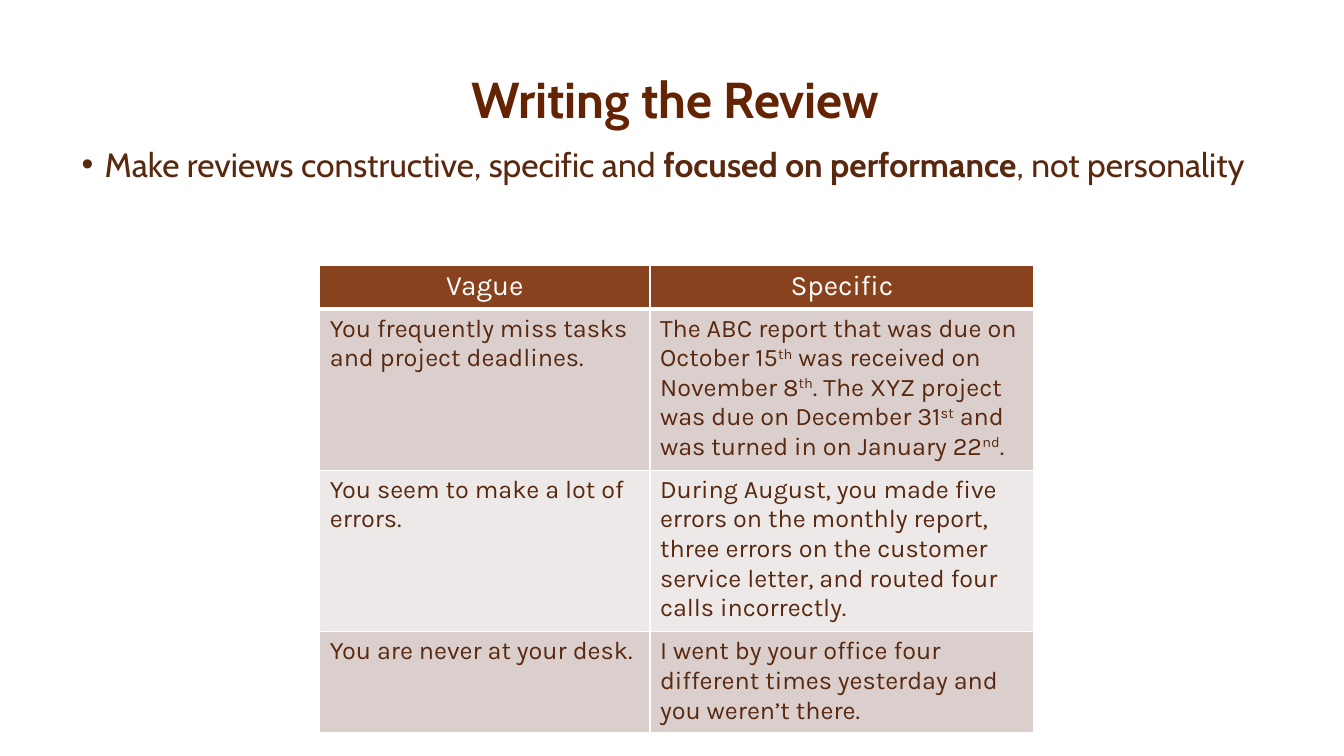
from lxml import etree
from pptx import Presentation
from pptx.dml.color import RGBColor
from pptx.enum.text import MSO_ANCHOR, PP_ALIGN
from pptx.oxml.ns import qn
from pptx.util import Cm, Pt

CENTER, LEFT = PP_ALIGN.CENTER, PP_ALIGN.LEFT
TOP, BOTTOM = MSO_ANCHOR.TOP, MSO_ANCHOR.BOTTOM
TITLE_BROWN = RGBColor(0x64, 0x24, 0x04)
TEXT_BROWN = RGBColor(0x59, 0x28, 0x0F)
HEADER_BROWN = RGBColor(0x88, 0x43, 0x1E)
BAND_DARK = RGBColor(0xDA, 0xCF, 0xCD)
BAND_LIGHT = RGBColor(0xED, 0xE9, 0xE8)
WHITE = RGBColor(0xFF, 0xFF, 0xFF)

TITLE_FONT = dict(name="Cabin", size=Pt(36), bold=True, color=TITLE_BROWN)
BODY_FONT = dict(name="Cabin", size=Pt(24), bold=False, color=TEXT_BROWN)
HEADER_FONT = dict(name="Karla", size=Pt(20), bold=False, color=WHITE)
CELL_FONT = dict(name="Karla", size=Pt(18), bold=False, color=TEXT_BROWN)

# Each text is a list of pieces; a (text, kind) pair is a bold or raised piece
BULLET = ["Make reviews constructive, specific and ",
          ("focused on performance", "bold"), ", not personality"]
COLUMN_WIDTHS = [Cm(8.32), Cm(9.68)]
ROW_HEIGHTS = [Cm(1.07), Cm(4.04), Cm(4.07), Cm(2.54)]
ROWS = [
    (["Vague"], ["Specific"]),
    (["You frequently miss tasks and project deadlines."],
     ["The ABC report that was due on October 15", ("th", "raised"),
      " was received on November 8", ("th", "raised"),
      ". The XYZ project was due on December 31", ("st", "raised"),
      " and was turned in on January 22", ("nd", "raised"), "."]),
    (["You seem to make a lot of errors."],
     ["During August, you made five errors on the monthly report, three errors "
      "on the customer service letter, and routed four calls incorrectly."]),
    (["You are never at your desk."],
     ["I went by your office four different times yesterday "
      "and you weren’t there."]),
]


def format_font(font, values):
    for key, value in values.items():
        if key == "color":
            font.color.rgb = value
        else:
            setattr(font, key, value)


def write(p, pieces, font, align):
    p.alignment = align
    for piece in pieces:
        text, kind = (piece, None) if isinstance(piece, str) else piece
        r = p.add_run()
        r.text = text
        format_font(r.font, font)
        if kind == "bold":
            r.font.bold = True
        elif kind == "raised":
            r._r.get_or_add_rPr().set("baseline", "30000")


def set_frame(tf, anchor):
    tf.word_wrap = True
    tf.vertical_anchor = anchor
    for side in ("left", "top", "right", "bottom"):
        setattr(tf, f"margin_{side}", 0)


def place(sp, left, top, width, height):
    sp.left, sp.top, sp.width, sp.height = left, top, width, height


def add_title(s, text):
    sp = s.shapes.title
    place(sp, Cm(9.35), Cm(2.03), Cm(15.34), Cm(1.24))
    set_frame(sp.text_frame, BOTTOM)
    p = sp.text_frame.paragraphs[0]
    p.line_spacing = 0.9
    write(p, [text], TITLE_FONT, CENTER)


def add_bullet(s, pieces):
    sp = s.shapes.add_textbox(Cm(1.8), Cm(3.63), Cm(29.92), Cm(2.44))
    set_frame(sp.text_frame, TOP)
    p = sp.text_frame.paragraphs[0]
    pPr = p._p.get_or_add_pPr()
    pPr.set("marL", str(Cm(0.84)))
    pPr.set("indent", str(Cm(-0.58)))
    etree.SubElement(pPr, qn("a:buFont"), typeface="Arial")
    etree.SubElement(pPr, qn("a:buChar"), char="•")
    write(p, pieces, BODY_FONT, LEFT)


def set_borders(cell, bottom_width):
    tcPr = cell._tc.get_or_add_tcPr()
    for side in "LRTB":
        width = bottom_width if side == "B" else Pt(1)
        ln = etree.SubElement(tcPr, qn(f"a:ln{side}"), w=str(width))
        fill = etree.SubElement(ln, qn("a:solidFill"))
        etree.SubElement(fill, qn("a:srgbClr"), val=str(WHITE))


def fill_cell(cell, pieces, row):
    header = row == 0
    set_borders(cell, Pt(3) if header else Pt(1))
    cell.fill.solid()
    band = BAND_DARK if row % 2 else BAND_LIGHT
    cell.fill.fore_color.rgb = HEADER_BROWN if header else band
    write(cell.text_frame.paragraphs[0], pieces,
          HEADER_FONT if header else CELL_FONT, CENTER if header else LEFT)


def add_review_table(s):
    frame = s.shapes.add_table(len(ROWS), len(COLUMN_WIDTHS), Cm(8.06), Cm(6.68),
                               sum(COLUMN_WIDTHS), sum(ROW_HEIGHTS))
    table = frame.table
    table.first_row = table.horz_banding = False
    for column, width in zip(table.columns, COLUMN_WIDTHS):
        column.width = width
    for i, (height, texts) in enumerate(zip(ROW_HEIGHTS, ROWS)):
        table.rows[i].height = height
        for j, pieces in enumerate(texts):
            fill_cell(table.cell(i, j), pieces, i)


def main():
    prs = Presentation()
    prs.slide_width, prs.slide_height = Cm(33.87), Cm(19.05)
    s = prs.slides.add_slide(prs.slide_layouts.get_by_name("Title Only"))

    # Heading and key advice
    add_title(s, "Writing the Review")
    add_bullet(s, BULLET)

    # Vague and specific wording compared
    add_review_table(s)

    prs.save("out.pptx")


if __name__ == "__main__":
    main()
